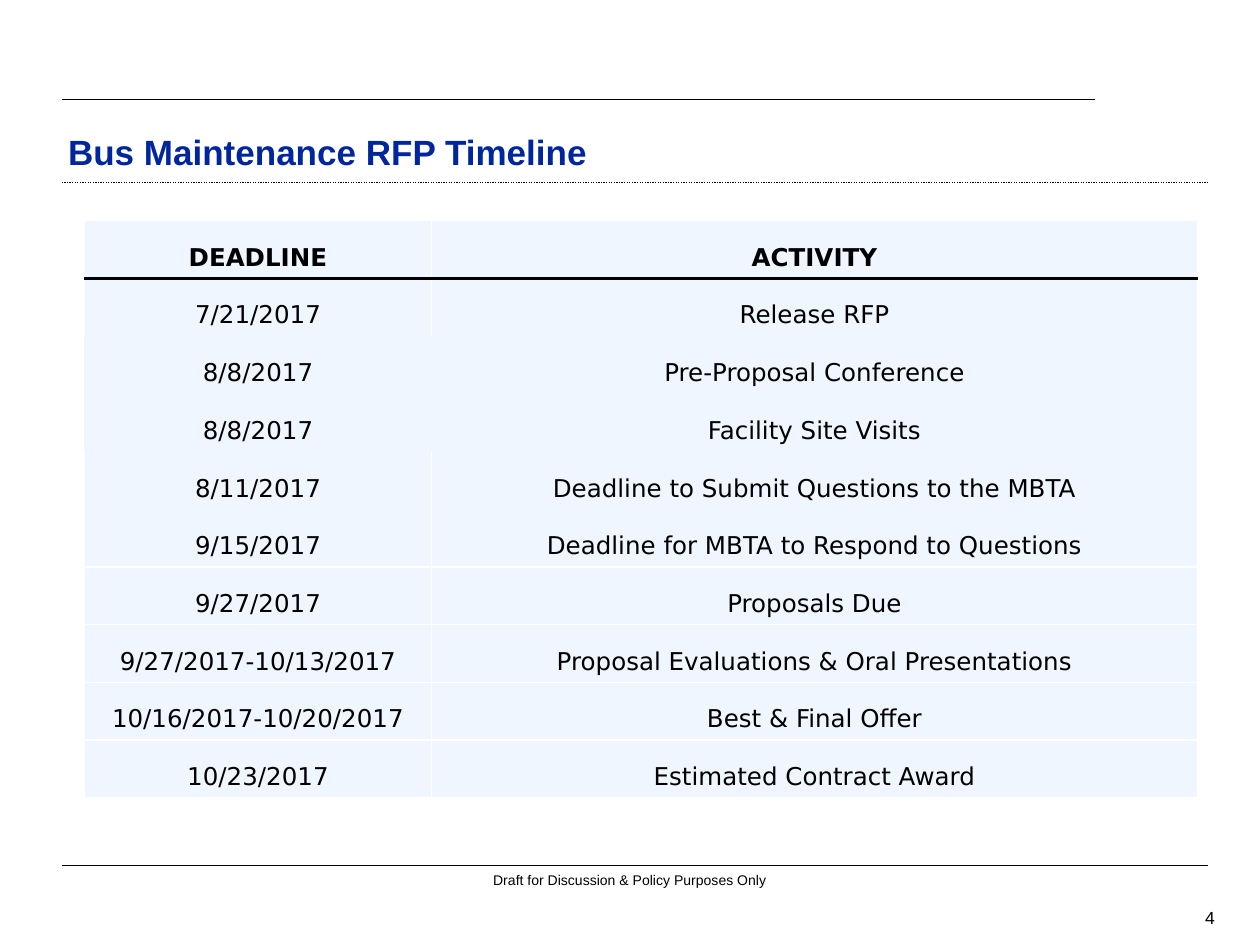
from lxml.etree import SubElement
from pptx import Presentation
from pptx.dml.color import RGBColor
from pptx.enum.dml import MSO_LINE
from pptx.enum.shapes import MSO_CONNECTOR
from pptx.enum.text import MSO_ANCHOR, MSO_AUTO_SIZE, PP_ALIGN
from pptx.oxml.ns import qn
from pptx.util import Pt

BLACK, WHITE, NAVY, PALE_BLUE = "000000", "FFFFFF", "00269E", "EFF6FF"
LEFT, RIGHT = 35.28, 690.48
ROW_HEIGHT = 33
COLUMN_WIDTHS = (198.4, 437.6)
HEADER = ("DEADLINE", "ACTIVITY")
MILESTONES = [
    ("7/21/2017", "Release RFP"),
    ("8/8/2017", "Pre-Proposal Conference"),
    ("8/8/2017", "Facility Site Visits"),
    ("8/11/2017", "Deadline to Submit Questions to the MBTA"),
    ("9/15/2017", "Deadline for MBTA to Respond to Questions"),
    ("9/27/2017", "Proposals Due"),
    ("9/27/2017-10/13/2017", "Proposal Evaluations & Oral Presentations"),
    ("10/16/2017-10/20/2017", "Best & Final Offer"),
    ("10/23/2017", "Estimated Contract Award"),
]
BORDERLESS_ROWS = (2, 3)
OPEN_EDGES = (2, 3, 4, 5)
HEADER_EDGE = 1


def color(hex_string):
    return RGBColor.from_string(hex_string)


def write_text(frame, text, size=14, font="Arial", fill=BLACK, bold=False,
               align=PP_ALIGN.CENTER):
    paragraph = frame.paragraphs[0]
    paragraph.alignment = align
    run = paragraph.add_run()
    run.text = text
    run.font.size = Pt(size)
    run.font.name = font
    run.font.bold = bold
    run.font.color.rgb = color(fill)


def add_rule(slide, y, right=RIGHT, width=0.75, dash=None):
    rule = slide.shapes.add_connector(
        MSO_CONNECTOR.STRAIGHT, Pt(LEFT), Pt(y), Pt(right), Pt(y))
    rule.line.color.rgb = color(BLACK)
    rule.line.width = Pt(width)
    if dash:
        rule.line.dash_style = dash
    SubElement(rule._element.spPr, qn("a:effectLst"))


def add_label(slide, text, left, top, width, height, anchor, **text_format):
    frame = slide.shapes.add_textbox(
        Pt(left), Pt(top), Pt(width), Pt(height)).text_frame
    frame.word_wrap = True
    frame.vertical_anchor = anchor
    write_text(frame, text, **text_format)


def add_title(slide, text):
    title = slide.shapes.title
    title.left, title.top = Pt(31.68), Pt(65.52)
    title.width, title.height = Pt(610.56), Pt(36.72)
    title.text_frame.auto_size = MSO_AUTO_SIZE.NONE
    title.text_frame.vertical_anchor = MSO_ANCHOR.BOTTOM
    write_text(title.text_frame, text, size=20, fill=NAVY, bold=True,
               align=PP_ALIGN.LEFT)


def set_border(cell, side, border):
    properties = cell._tc.get_or_add_tcPr()
    if border is None:
        line = SubElement(properties, qn(f"a:ln{side}"), w="0")
        SubElement(line, qn("a:noFill"))
        return
    hex_string, width = border
    line = SubElement(properties, qn(f"a:ln{side}"), w=str(Pt(width)))
    fill = SubElement(line, qn("a:solidFill"))
    SubElement(fill, qn("a:srgbClr"), val=hex_string)


def edge_border(edge):
    if edge == HEADER_EDGE:
        return BLACK, 2.25
    return None if edge in OPEN_EDGES else (WHITE, 1)


def add_timeline(slide):
    rows = [HEADER] + MILESTONES
    table = slide.shapes.add_table(
        len(rows), len(HEADER), Pt(48.24), Pt(126),
        Pt(sum(COLUMN_WIDTHS)), Pt(ROW_HEIGHT * len(rows))).table
    table.first_row = table.horz_banding = False
    for column, width in zip(table.columns, COLUMN_WIDTHS):
        column.width = Pt(width)
    for row_index, texts in enumerate(rows):
        side_border = None if row_index in BORDERLESS_ROWS else (WHITE, 1)
        for column_index, text in enumerate(texts):
            cell = table.cell(row_index, column_index)
            set_border(cell, "L", side_border)
            set_border(cell, "R", side_border)
            set_border(cell, "T", edge_border(row_index))
            set_border(cell, "B", edge_border(row_index + 1))
            cell.fill.solid()
            cell.fill.fore_color.rgb = color(PALE_BLUE)
            cell.vertical_anchor = MSO_ANCHOR.BOTTOM
            write_text(cell.text_frame, text, font="DejaVu Sans",
                       bold=row_index == 0)


def main():
    presentation = Presentation()
    presentation.slide_width, presentation.slide_height = Pt(720), Pt(540)
    slide = presentation.slides.add_slide(presentation.slide_layouts[5])
    add_rule(slide, 56.88, right=625.68, width=1)
    add_rule(slide, 104.4, dash=MSO_LINE.ROUND_DOT)
    add_rule(slide, 494.64)
    add_label(slide, "4", 641.52, 515.52, 59.76, 18, MSO_ANCHOR.MIDDLE,
              size=10, align=PP_ALIGN.RIGHT)
    add_label(slide, "Draft for Discussion & Policy Purposes Only",
              257.04, 494.64, 205.92, 17.28, MSO_ANCHOR.TOP, size=8)
    add_title(slide, "Bus Maintenance RFP Timeline")
    add_timeline(slide)
    presentation.save("out.pptx")


if __name__ == "__main__":
    main()
